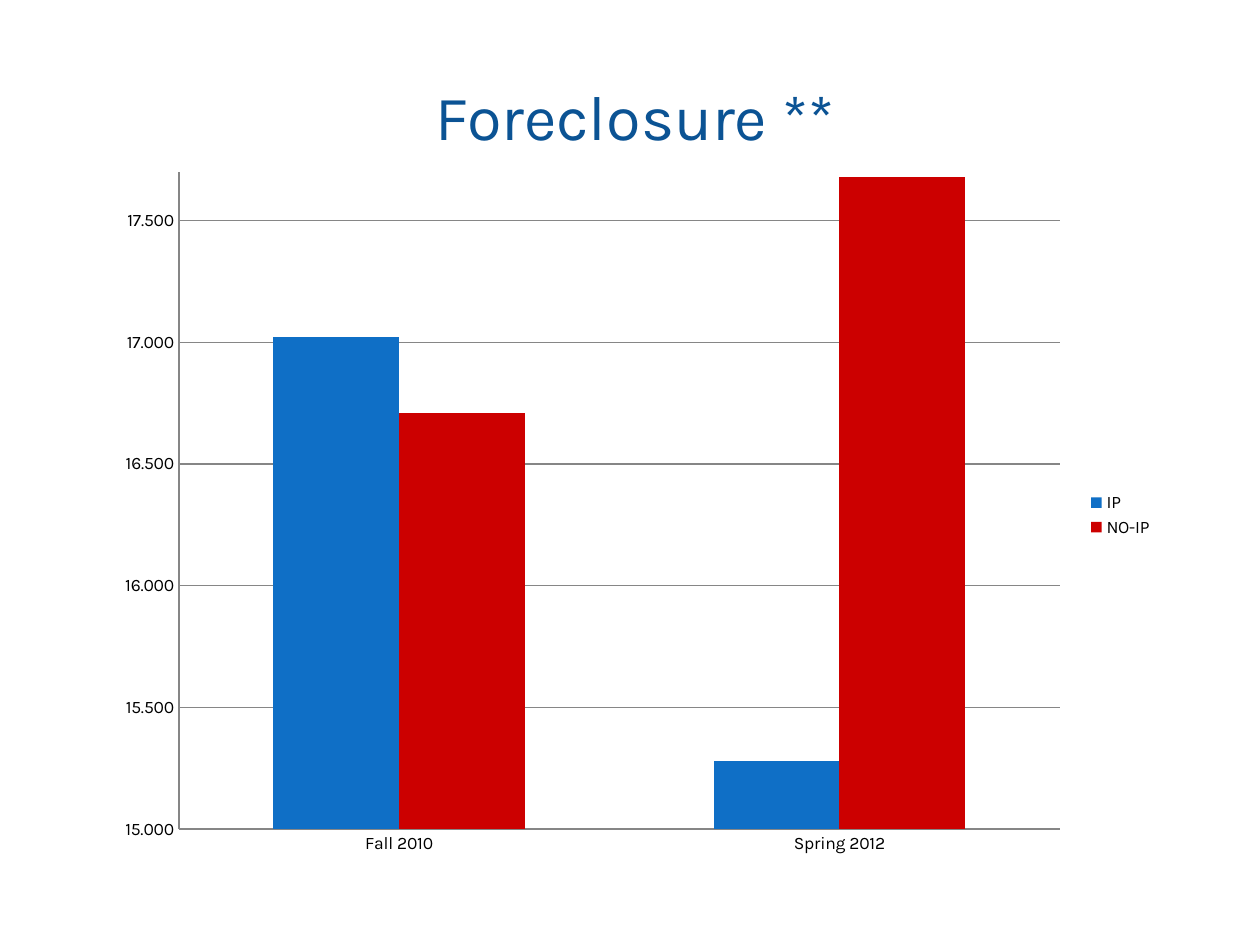
from dataclasses import dataclass

from lxml import etree
from pptx import Presentation
from pptx import util as u
from pptx.chart.data import CategoryChartData
from pptx.dml.color import RGBColor
from pptx.enum import chart as charts, text
from pptx.oxml.ns import qn


@dataclass(frozen=True)
class Theme:
    font: str = "Karla"
    title_size: int = 36
    chart_size: int = 10
    title: str = "0B5394"
    label: str = "000000"
    grid: str = "868686"
    background: str = "FFFFFF"
    series: tuple = ("0F6FC6", "CC0000")


class SlideBuilder:
    def __init__(self, slide, theme):
        self.slide = slide
        self.theme = theme
        fill = slide.background.fill
        fill.solid()
        fill.fore_color.rgb = RGBColor.from_string(theme.background)

    def style_font(self, font, size, color):
        font.name = self.theme.font
        font.size = u.Pt(size)
        font.color.rgb = RGBColor.from_string(color)

    def style_line(self, line):
        line.width = u.Pt(0.75)
        line.color.rgb = RGBColor.from_string(self.theme.grid)

    def add_title(self, wording, left, top, width, height):
        frame = self.slide.shapes.add_textbox(left, top, width, height).text_frame
        frame.word_wrap = True
        frame.vertical_anchor = text.MSO_ANCHOR.MIDDLE
        paragraph = frame.paragraphs[0]
        paragraph.text = wording
        paragraph.alignment = text.PP_ALIGN.CENTER
        self.style_font(paragraph.font, self.theme.title_size, self.theme.title)

    def add_column_chart(self, categories, series, left, top, width, height):
        data = CategoryChartData(number_format="####.000")
        data.categories = categories
        for name, values in series.items():
            data.add_series(name, values)
        chart = self.slide.shapes.add_chart(
            charts.XL_CHART_TYPE.COLUMN_CLUSTERED, left, top, width, height, data
        ).chart
        chart.has_title = False
        self.style_font(chart.font, self.theme.chart_size, self.theme.label)

        chart.has_legend = True
        chart.legend.position = charts.XL_LEGEND_POSITION.RIGHT
        chart.legend.include_in_layout = False

        plot = chart.plots[0]
        plot.gap_width = 150
        plot.overlap = 0
        plot.vary_by_categories = False
        for column, color in zip(plot.series, self.theme.series):
            column.format.fill.solid()
            column.format.fill.fore_color.rgb = RGBColor.from_string(color)

        for axis in (chart.category_axis, chart.value_axis):
            axis.major_tick_mark = charts.XL_TICK_MARK.NONE
            axis.minor_tick_mark = charts.XL_TICK_MARK.NONE
            self.style_line(axis.format.line)
        return chart

    def scale_values(self, axis, minimum, maximum, step, number_format):
        axis.minimum_scale = minimum
        axis.maximum_scale = maximum
        axis.major_unit = step
        axis.has_major_gridlines = True
        self.style_line(axis.major_gridlines.format.line)
        axis.tick_labels.number_format = number_format
        axis.tick_labels.number_format_is_linked = False

    def place_plot(self, chart, **fractions):
        """Fix the inner plot area at x, y, w, h fractions of the chart."""
        plot_area = chart.element.find(".//" + qn("c:plotArea"))
        for old_layout in plot_area.findall(qn("c:layout")):
            plot_area.remove(old_layout)
        layout = etree.Element(qn("c:layout"))
        manual = etree.SubElement(layout, qn("c:manualLayout"))
        settings = {"layoutTarget": "inner", "xMode": "edge", "yMode": "edge"}
        for tag, value in (settings | fractions).items():
            etree.SubElement(manual, qn("c:" + tag)).set("val", str(value))
        plot_area.insert(0, layout)


def main():
    presentation = Presentation()
    presentation.slide_width = u.Cm(25.4)
    presentation.slide_height = u.Cm(19.05)
    slide = presentation.slides.add_slide(presentation.slide_layouts[6])
    builder = SlideBuilder(slide, Theme())

    left, width = u.Cm(2.11), u.Cm(21.39)
    builder.add_title("Foreclosure **", left, u.Cm(1.7), width, u.Cm(1.27))
    chart = builder.add_column_chart(
        ["Fall 2010", "Spring 2012"],
        {"IP": (17.02, 15.28), "NO-IP": (16.71, 17.68)},
        left, u.Cm(3.18), width, u.Cm(14.4),
    )
    builder.scale_values(chart.value_axis, 15, 17.7, 0.5, "####.000")
    builder.place_plot(chart, x=0.07, y=0.02, w=0.83, h=0.92)
    presentation.save("out.pptx")


if __name__ == "__main__":
    main()
